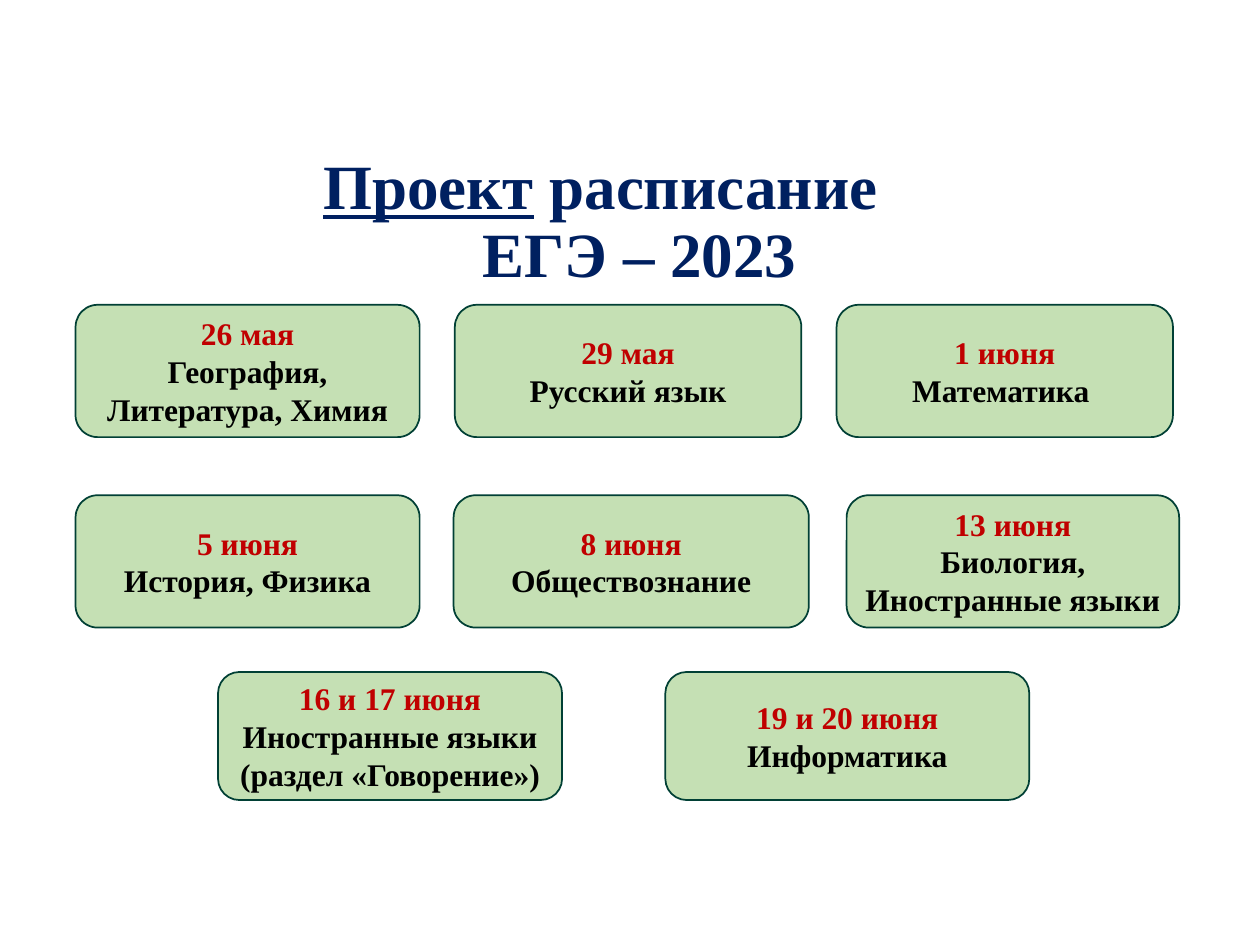
from pptx import Presentation
from pptx.dml.color import RGBColor as Rgb
from pptx.enum.shapes import MSO_SHAPE as Shape
from pptx.enum.text import MSO_ANCHOR as Anchor, MSO_AUTO_SIZE as AutoSize, PP_ALIGN as Align
from pptx.util import Pt

COLORS = {"title": "002060", "date": "C00000", "subject": "000000",
          "card": "C5E0B4", "border": "014035"}

ROWS = [
    (174.2, 75.6, [
        (43.2, 196.6, "26 мая", "География, Литература, Химия"),
        (259.9, 198, "29 мая", "Русский язык"),
        (478.1, 192.2, "1 июня", "Математика "),
    ]),
    (283, 75.6, [
        (43.2, 196.6, "5 июня", "История, Физика"),
        (259.2, 203, "8 июня", "Обществознание"),
        (483.8, 190, "13 июня", "Биология, Иностранные языки"),
    ]),
    (384, 73.2, [
        (124.6, 196.6, "16 и 17 июня", "Иностранные языки (раздел «Говорение»)"),
        (380.2, 208, "19 и 20 июня", "Информатика"),
    ]),
]


def apply(target, values):
    for name, value in values.items():
        setattr(target, name, value)


class ScheduleSlide:
    font = {"name": "Times New Roman", "bold": True}
    frame = {"word_wrap": True, "auto_size": AutoSize.NONE, "vertical_anchor": Anchor.MIDDLE}
    card_margins = {"margin_left": Pt(5), "margin_right": Pt(5)}

    def __init__(self, deck):
        self.slide = deck.slides.add_slide(deck.slide_layouts[5])

    def run(self, paragraph, text, size, color, underline=False):
        run = paragraph.add_run()
        run.text = text
        apply(run.font, {**self.font, "size": Pt(size), "underline": underline})
        run.font.color.rgb = Rgb.from_string(COLORS[color])

    def title(self, left, top, width, height, lines):
        title = self.slide.shapes.title
        apply(title, {"left": Pt(left), "top": Pt(top), "width": Pt(width), "height": Pt(height)})
        frame = title.text_frame
        apply(frame, {**self.frame, "margin_right": Pt(43.2)})
        for index, (indent, parts) in enumerate(lines):
            paragraph = frame.add_paragraph() if index else frame.paragraphs[0]
            paragraph._p.get_or_add_pPr().set("marL", str(Pt(indent)))
            apply(paragraph, {"alignment": Align.CENTER, "line_spacing": 0.9,
                              "space_before": Pt(0)})
            for text, underline in parts:
                self.run(paragraph, text, 36, "title", underline)

    def card(self, left, top, width, height, date, subject):
        card = self.slide.shapes.add_shape(
            Shape.ROUNDED_RECTANGLE, Pt(left), Pt(top), Pt(width), Pt(height))
        card.shadow.inherit = False
        card.fill.solid()
        card.fill.fore_color.rgb = Rgb.from_string(COLORS["card"])
        card.line.color.rgb = Rgb.from_string(COLORS["border"])
        card.line.width = Pt(1)
        frame = card.text_frame
        apply(frame, {**self.frame, **self.card_margins})
        for paragraph, text, color in (
                (frame.paragraphs[0], date, "date"),
                (frame.add_paragraph(), subject, "subject")):
            paragraph.alignment = Align.CENTER
            self.run(paragraph, text, 18, color)


def main():
    deck = Presentation()
    apply(deck, {"slide_width": Pt(720), "slide_height": Pt(540)})
    schedule = ScheduleSlide(deck)
    schedule.title(90, 100, 542, 55.4, [
        (0, [("Проект", True), (" расписание", False)]),
        (45, [("ЕГЭ – 2023", False)]),
    ])
    for top, height, exams in ROWS:
        for left, width, date, subject in exams:
            schedule.card(left, top, width, height, date, subject)
    deck.save("out.pptx")


if __name__ == "__main__":
    main()
